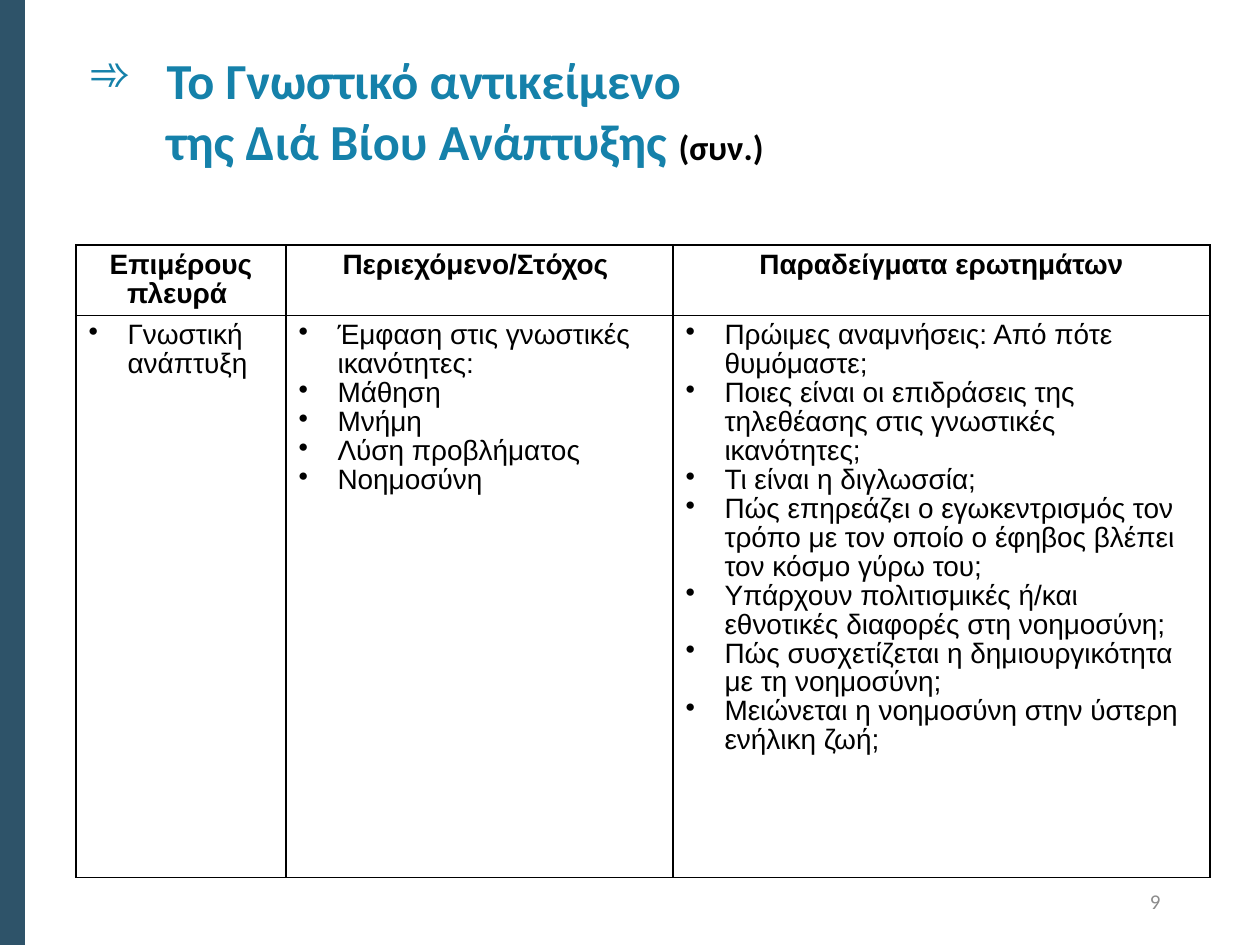
from dataclasses import dataclass

from lxml import etree
from pptx import Presentation
from pptx import util as u
from pptx.dml import color
from pptx.enum import shapes, text
from pptx.oxml import ns

PX = u.Inches(1) / 126


@dataclass(frozen=True)
class Theme:
    black: str = "000000"
    bar: str = "2E5369"
    title: str = "1581AA"
    muted: str = "8C8C8C"
    heading_font: str = "Calibri"
    body_font: str = "Arial"
    title_size: float = 28.8
    suffix_size: float = 19.8
    table_size: float = 16
    number_size: float = 12
    border_width: float = 0.96
    line_spacing: float = 0.93


@dataclass(frozen=True)
class Box:
    left: int
    top: int
    width: int
    height: int

    def emu(self) -> list[int]:
        return [px(n) for n in (self.left, self.top, self.width, self.height)]


@dataclass(frozen=True)
class Column:
    width: int
    heading: str
    items: tuple[str, ...]


THEME = Theme()
TABLE_BOX = Box(76, 245, 1134, 632)
HEADER_HEIGHT = 70
COLUMNS = (
    Column(210, "Επιμέρους πλευρά ", ("Γνωστική ανάπτυξη",)),
    Column(387, "Περιεχόμενο/Στόχος ", (
        "Έμφαση στις γνωστικές ικανότητες:",
        "Μάθηση",
        "Μνήμη",
        "Λύση προβλήματος",
        "Νοημοσύνη",
    )),
    Column(537, "Παραδείγματα ερωτημάτων", (
        "Πρώιμες αναμνήσεις: Από πότε θυμόμαστε;",
        "Ποιες είναι οι επιδράσεις της τηλεθέασης στις γνωστικές ικανότητες;",
        "Τι είναι η διγλωσσία;",
        "Πώς επηρεάζει ο εγωκεντρισμός τον τρόπο με τον οποίο ο έφηβος βλέπει "
        "τον κόσμο γύρω του;",
        "Υπάρχουν πολιτισμικές ή/και εθνοτικές διαφορές στη νοημοσύνη;",
        "Πώς συσχετίζεται η δημιουργικότητα με τη νοημοσύνη;",
        "Μειώνεται η νοημοσύνη στην ύστερη ενήλικη ζωή;",
    )),
)


def px(length: int) -> int:
    return round(length * PX)


def set_font(font, name: str, size: float, rgb: str, bold: bool = False) -> None:
    font.name = name
    font.size = u.Pt(size)
    font.bold = bold
    font.color.rgb = color.RGBColor.from_string(rgb)


def set_bullet(para, mark: str, indent: int) -> None:
    props = para._p.get_or_add_pPr()
    props.set("marL", str(px(indent)))
    props.set("indent", str(-px(indent)))
    etree.SubElement(props, ns.qn("a:buChar"), char=mark)


def set_borders(cell) -> None:
    props = cell._tc.get_or_add_tcPr()
    for side in ("lnL", "lnR", "lnT", "lnB"):
        line = etree.SubElement(props, ns.qn(f"a:{side}"), w=str(u.Pt(THEME.border_width)))
        fill = etree.SubElement(line, ns.qn("a:solidFill"))
        etree.SubElement(fill, ns.qn("a:srgbClr"), val=THEME.black)


def fill_cell(cell, lines: tuple[str, ...], heading: bool) -> None:
    set_borders(cell)
    cell.fill.background()
    if not heading:
        cell.margin_bottom = 0
    frame = cell.text_frame
    for index, line in enumerate(lines):
        para = frame.add_paragraph() if index else frame.paragraphs[0]
        para.text = line
        para.line_spacing = THEME.line_spacing
        if heading:
            para.alignment = text.PP_ALIGN.CENTER
        else:
            set_bullet(para, "•", 39)
        set_font(para.font, THEME.body_font, THEME.table_size, THEME.black, heading)


def draw_bar(page) -> None:
    bar = page.shapes.add_shape(shapes.MSO_SHAPE.RECTANGLE, *Box(0, 0, 25, 945).emu())
    bar.shadow.inherit = False
    bar.fill.solid()
    bar.fill.fore_color.rgb = color.RGBColor.from_string(THEME.bar)
    bar.line.fill.background()


def draw_title(page) -> None:
    title = page.shapes.title
    title.left, title.top, title.width, title.height = Box(76, 43, 1101, 122).emu()
    frame = title.text_frame
    frame.auto_size = text.MSO_AUTO_SIZE.NONE
    frame.vertical_anchor = text.MSO_ANCHOR.TOP
    para = frame.paragraphs[0]
    para.alignment = text.PP_ALIGN.LEFT
    set_bullet(para, "➾", 78)
    for index, line in enumerate(("Το Γνωστικό αντικείμενο", "της Διά Βίου Ανάπτυξης ")):
        if index:
            para.add_line_break()
        span = para.add_run()
        span.text = line
        set_font(span.font, THEME.heading_font, THEME.title_size, THEME.title, True)
    suffix = para.add_run()
    suffix.text = "(συν.)"
    set_font(suffix.font, THEME.heading_font, THEME.suffix_size, THEME.black, True)


def draw_table(page) -> None:
    table = page.shapes.add_table(2, len(COLUMNS), *TABLE_BOX.emu()).table
    table.first_row = False
    table.horz_banding = False
    table.rows[0].height = px(HEADER_HEIGHT)
    table.rows[1].height = px(TABLE_BOX.height - HEADER_HEIGHT)
    for index, column in enumerate(COLUMNS):
        table.columns[index].width = px(column.width)
        fill_cell(table.cell(0, index), (column.heading,), True)
        fill_cell(table.cell(1, index), column.items, False)


def draw_page_number(page) -> None:
    frame = page.shapes.add_textbox(*Box(890, 876, 283, 50).emu()).text_frame
    frame.word_wrap = True
    frame.vertical_anchor = text.MSO_ANCHOR.MIDDLE
    para = frame.paragraphs[0]
    para.text = "9"
    para.alignment = text.PP_ALIGN.RIGHT
    set_font(para.font, THEME.heading_font, THEME.number_size, THEME.muted)


def main() -> None:
    deck = Presentation()
    deck.slide_width, deck.slide_height = px(1260), px(945)
    page = deck.slides.add_slide(deck.slide_layouts[5])
    draw_bar(page)
    draw_title(page)
    draw_table(page)
    draw_page_number(page)
    deck.save("out.pptx")


if __name__ == "__main__":
    main()
